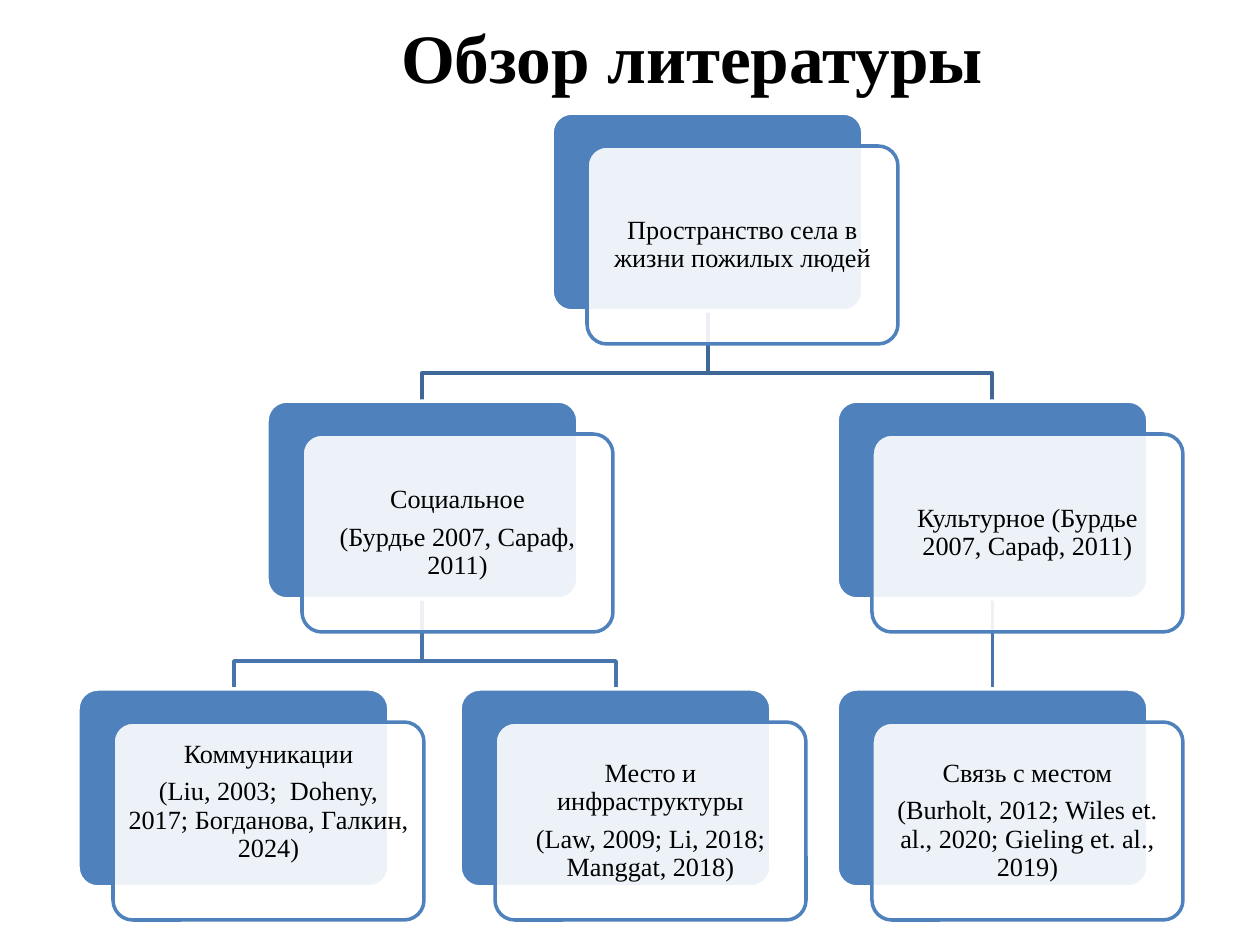
import pptx
import pptx.util
import pptx.dml.color
import pptx.enum.shapes
import pptx.enum.text
import pptx.oxml
import pptx.oxml.ns

TITLE = "Обзор литературы"
FONT = "Times New Roman"
BLUE, WHITE, BLACK = "4F81BD", "FFFFFF", "000000"
LEVEL_LINES = ["3F6797", "4875AC"]

# name: (left, level, parent, extra bottom inset, paragraphs)
NODES = {
    "space": (552, 0, None, 0, ["Пространство села в жизни пожилых людей"]),
    "social": (267, 1, "space", 0, ["Социальное", "(Бурдье 2007, Сараф, 2011)"]),
    "communication": (78, 2, "social", 38, [
        "Коммуникации", "(Liu, 2003;  Doheny, 2017; Богданова, Галкин, 2024)"]),
    "place": (460, 2, "social", 0, [
        "Место и инфраструктуры", "(Law, 2009; Li, 2018; Manggat, 2018)"]),
    "cultural": (837, 1, "space", 0, ["Культурное (Бурдье 2007, Сараф, 2011)"]),
    "bond": (837, 2, "cultural", 0, [
        "Связь с местом", "(Burholt, 2012; Wiles et. al., 2020; Gieling et. al., 2019)"]),
}

SCALE = 914400 / 126
CARD_W, CARD_H = 311, 198
TOP, LEVEL_STEP = 113, 288
SHIFT_X, SHIFT_Y = 35, 33
ELBOW_DROP, INSET = 62, 8


def px(n):
    return pptx.util.Emu(round(n * SCALE))


def color(value):
    return pptx.dml.color.RGBColor.from_string(value)


def set_line(s, value):
    s.line.color.rgb = color(value)
    s.line.width = pptx.util.Pt(2)


def add_card(left, top, fill, line):
    s = slide.shapes.add_shape(pptx.enum.shapes.MSO_SHAPE.ROUNDED_RECTANGLE,
                               px(left), px(top), px(CARD_W), px(CARD_H))
    s.adjustments[0] = 0.1
    s.shadow.inherit = False
    s.fill.solid()
    s.fill.fore_color.rgb = color(fill)
    set_line(s, line)
    return s


def write(s, paragraphs, size, bold=False):
    tf = s.text_frame
    tf.word_wrap = True
    tf.vertical_anchor = pptx.enum.text.MSO_ANCHOR.MIDDLE
    tf.text = "\n".join(paragraphs)
    for p in tf.paragraphs:
        p.alignment = pptx.enum.text.PP_ALIGN.CENTER
        p.font.name = FONT
        p.font.size = pptx.util.Pt(size)
        p.font.bold = bold
        p.font.color.rgb = color(BLACK)
    return tf


def add_link(parent, child):
    left, level = NODES[parent][:2]
    x1, y1 = left + CARD_W / 2, TOP + level * LEVEL_STEP + CARD_H
    x2, y2 = NODES[child][0] + CARD_W / 2, TOP + (level + 1) * LEVEL_STEP
    if x1 == x2:
        s = slide.shapes.add_connector(pptx.enum.shapes.MSO_CONNECTOR.STRAIGHT,
                                       px(x1), px(y1), px(x2), px(y2))
        s._element.spPr.append(pptx.oxml.parse_xml(
            "<a:effectLst %s/>" % pptx.oxml.ns.nsdecls("a")))
    else:
        elbow = y1 + ELBOW_DROP
        builder = slide.shapes.build_freeform(x1, y1, scale=SCALE)
        builder.add_line_segments([(x1, elbow), (x2, elbow), (x2, y2)], close=False)
        s = builder.convert_to_shape()
        s.fill.background()
        s.shadow.inherit = False
    set_line(s, LEVEL_LINES[level])


def add_node(left, level, parent, extra_bottom, paragraphs):
    top = TOP + level * LEVEL_STEP
    add_card(left, top, BLUE, WHITE)
    s = add_card(left + SHIFT_X, top + SHIFT_Y, WHITE, BLUE)
    fill = s._element.spPr.find(".//" + pptx.oxml.ns.qn("a:srgbClr"))
    fill.append(pptx.oxml.parse_xml(
        '<a:alpha %s val="90000"/>' % pptx.oxml.ns.nsdecls("a")))
    tf = write(s, paragraphs, 15)
    tf.margin_left = tf.margin_right = tf.margin_top = px(INSET)
    tf.margin_bottom = px(INSET + extra_bottom)
    for p in tf.paragraphs:
        p.line_spacing = 0.9
        p.space_after = pptx.util.Pt(5.25)


prs = pptx.Presentation()
prs.slide_width, prs.slide_height = px(1260), px(945)
slide = prs.slides.add_slide(prs.slide_layouts[6])

title = slide.shapes.add_textbox(px(106), px(26), px(1172 - 2 * 20), px(59))
title.left = px(126)
write(title, [TITLE], 39.6, True)

for name, node in NODES.items():
    if node[2]:
        add_link(node[2], name)
for node in NODES.values():
    add_node(*node)

prs.save("out.pptx")
